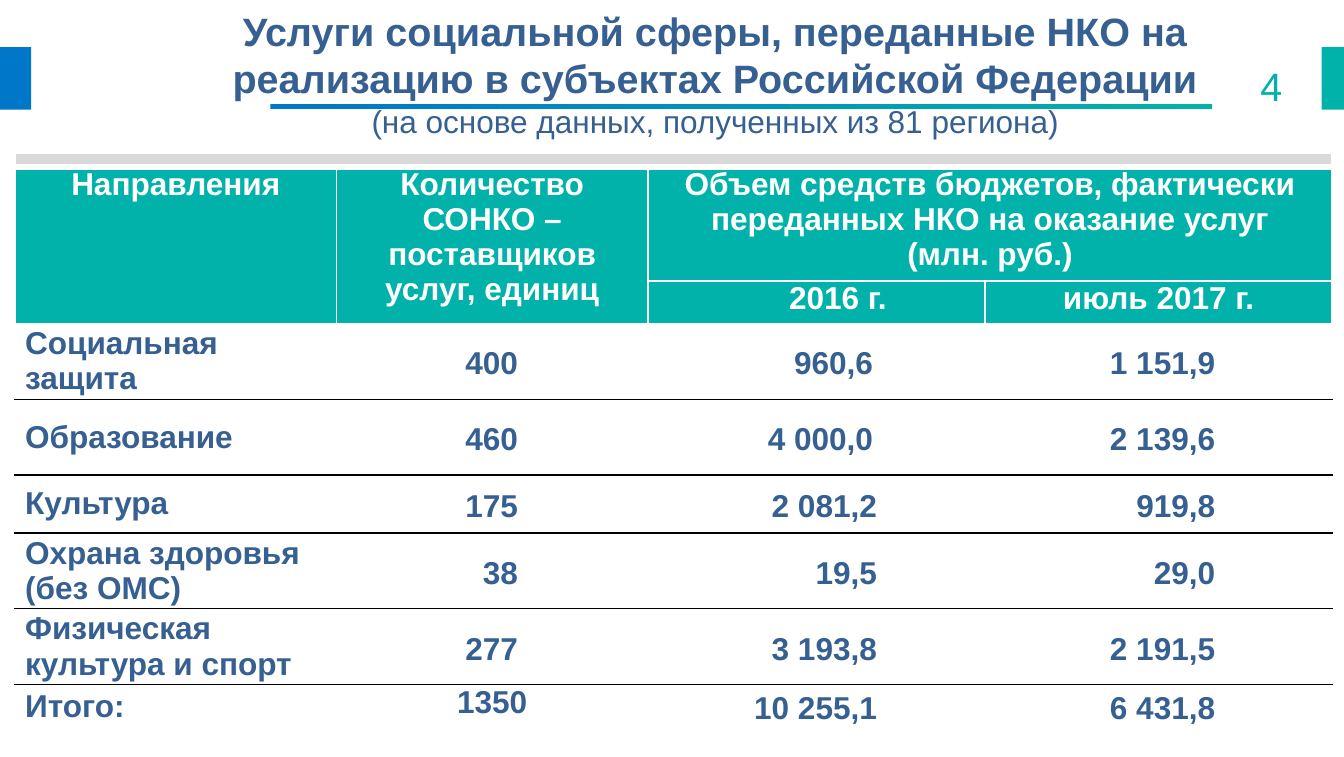
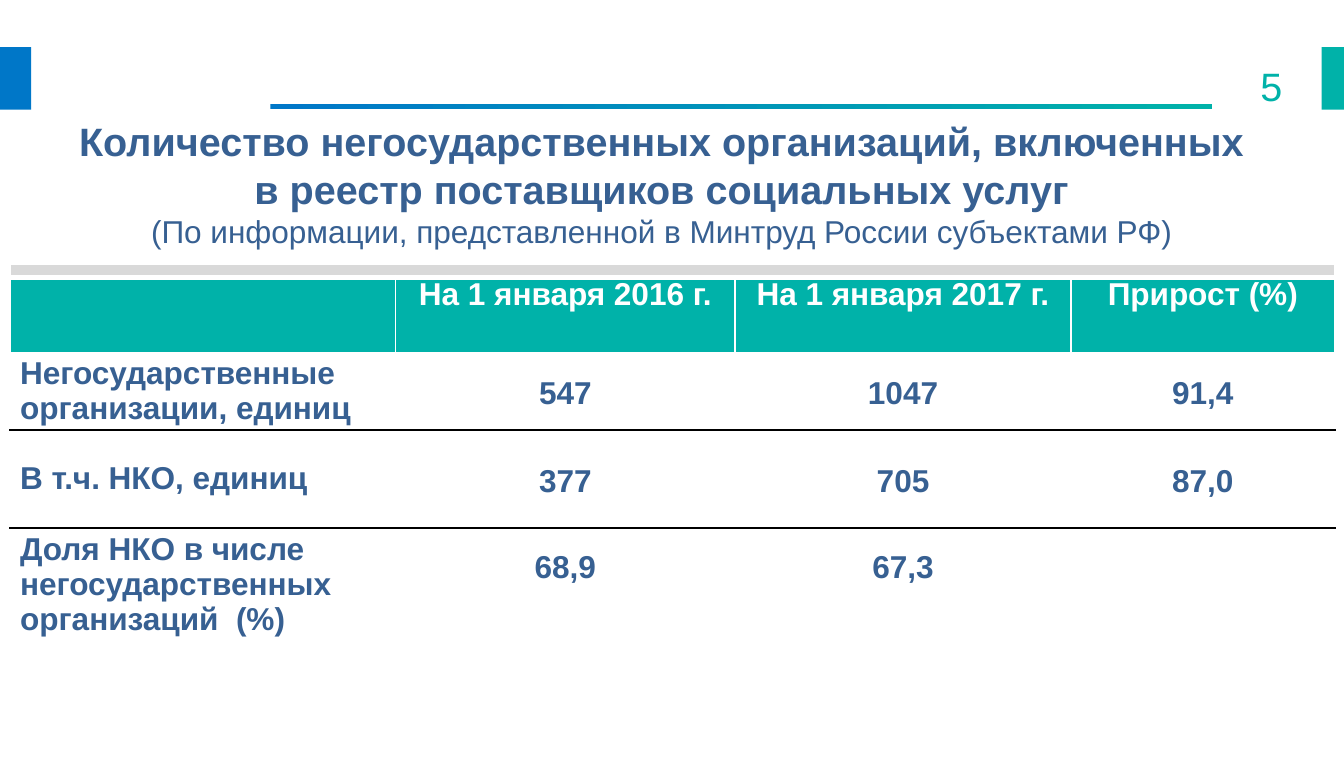
import pptx
import pptx.util
import pptx.dml.color
import pptx.enum.shapes
import pptx.enum.text
import pptx.oxml.ns
from lxml import etree

Cm = pptx.util.Cm
Pt = pptx.util.Pt
RGBColor = pptx.dml.color.RGBColor
ALIGN = pptx.enum.text.PP_ALIGN
ANCHOR = pptx.enum.text.MSO_ANCHOR
qn = pptx.oxml.ns.qn

BLUE = RGBColor(0x00, 0x77, 0xC8)
TEAL = RGBColor(0x00, 0xB2, 0xA9)
NAVY = RGBColor(0x37, 0x60, 0x92)
GREY = RGBColor(0xD9, 0xD9, 0xD9)
WHITE = RGBColor(0xFF, 0xFF, 0xFF)
BLACK = RGBColor(0x00, 0x00, 0x00)

# Shared text formats
TITLE = {"name": "Arial", "size": Pt(20), "bold": True}
SUBTITLE = {"name": "Arial", "size": Pt(16), "bold": False}
NUMBER = {"name": "Arial", "size": Pt(20), "bold": False}
CELL = {"name": "Arial", "size": Pt(16), "bold": True}

SIDE_MARGIN = 0.18
STRIPE_TEXT_SIZE = 4

# Content of the slides; measures in centimetres
slides = [
    {
        "number": "4",
        "title": "Услуги социальной сферы, переданные НКО на реализацию в субъектах Российской Федерации",
        "subtitle": "(на основе данных, полученных из 81 региона)",
        "title_box": (3.68, 0, 18.19, 2.64),
        "table_at": (0.27, 2.73),
        "columns": [5.74, 5.56, 6.02, 6.2],
        "rows": [0.25, 2.03, 0.76, 1.35, 1.35, 1.03, 1.35, 1.35, 0.76],
        "header_rows": 2,
        "merges": [(1, 0, 2, 0), (1, 1, 2, 1), (1, 2, 1, 3)],
        "figure_align": ALIGN.RIGHT,
        "figure_margins": [2.32, 1.93, 2.09],
        "cells": [
            ["Направления", "Количество СОНКО – поставщиков услуг, единиц",
             "Объем средств бюджетов, фактически переданных НКО на оказание услуг\n(млн. руб.)", ""],
            ["", "", "2016 г.", "июль 2017 г."],
            ["Социальная защита", "400", "960,6", "1 151,9"],
            ["Образование", "460", "4 000,0", "2 139,6"],
            ["Культура", "175", "2 081,2", "919,8"],
            ["Охрана здоровья (без ОМС)", "38", "19,5", "29,0"],
            ["Физическая культура и спорт", "277", "3 193,8", "2 191,5"],
            ["Итого:", "1350", "10 255,1", "6 431,8"],
        ],
    },
    {
        "number": "5",
        "title": "Количество негосударственных организаций, включенных в реестр поставщиков социальных услуг",
        "subtitle": "(По информации, представленной в Минтруд России субъектами РФ)",
        "title_box": (1.01, 1.97, 21.62, 2.65),
        "table_at": (0.18, 4.72),
        "columns": [6.88, 6.07, 5.99, 4.72],
        "rows": [0.23, 1.35, 1.37, 1.75, 1.95],
        "header_rows": 1,
        "merges": [],
        "figure_align": ALIGN.CENTER,
        "figure_margins": [SIDE_MARGIN] * 3,
        "cells": [
            ["", "На 1 января 2016 г.", "На 1 января 2017 г.", "Прирост (%)"],
            ["Негосударственные организации, единиц", "547", "1047", "91,4"],
            ["В т.ч. НКО, единиц", "377", "705", "87,0"],
            ["Доля НКО в числе негосударственных организаций  (%)", "68,9", "67,3", ""],
        ],
    },
]


def write(frame, lines, color, align, spacing=1.0):
    """Fill a text frame with one paragraph per (text, format) pair."""
    for index, (text, style) in enumerate(lines):
        paragraph = frame.paragraphs[0] if index == 0 else frame.add_paragraph()
        paragraph.alignment = align
        paragraph.line_spacing = spacing
        run = paragraph.add_run()
        run.text = text
        for key, value in style.items():
            setattr(run.font, key, value)
        run.font.color.rgb = color


def set_borders(cell, top, bottom):
    """Draw white sides and the given (colour, points) top and bottom lines."""
    sides = {"a:lnL": (WHITE, 1), "a:lnR": (WHITE, 1), "a:lnT": top, "a:lnB": bottom}
    properties = cell._tc.get_or_add_tcPr()
    for position, (tag, (color, width)) in enumerate(sides.items()):
        line = etree.Element(qn(tag), w=str(Pt(width)))
        solid = etree.SubElement(line, qn("a:solidFill"))
        etree.SubElement(solid, qn("a:srgbClr"), val=str(color))
        properties.insert(position, line)


deck = pptx.Presentation()
deck.slide_width = Cm(24)
deck.slide_height = Cm(13.51)

for content in slides:
    slide = deck.slides.add_slide(deck.slide_layouts[6])

    # Edge blocks and the line under the heading area
    for box, colors in [
        ((0, 0.84, 0.56, 1.12), [BLUE]),
        ((23.6, 0.84, 0.4, 1.12), [TEAL]),
        ((4.83, 1.85, 16.81, 0.1), [BLUE, TEAL]),
    ]:
        band = slide.shapes.add_shape(pptx.enum.shapes.MSO_SHAPE.RECTANGLE, *map(Cm, box))
        band.shadow.inherit = False
        band.line.fill.background()
        if len(colors) == 1:
            band.fill.solid()
            band.fill.fore_color.rgb = colors[0]
        else:
            band.fill.gradient()
            band.fill.gradient_angle = 0
            for stop, color in zip(band.fill.gradient_stops, colors):
                stop.color.rgb = color

    # Title and slide number
    heading = [(content["title"], TITLE), (content["subtitle"], SUBTITLE)]
    for box, lines, color, align in [
        (content["title_box"], heading, NAVY, ALIGN.CENTER),
        ((22.03, 0.99, 1.12, 0.71), [(content["number"], NUMBER)], TEAL, ALIGN.RIGHT),
    ]:
        frame = slide.shapes.add_textbox(*map(Cm, box)).text_frame
        frame.word_wrap = True
        write(frame, lines, color, align)

    # Table grid
    columns, rows = content["columns"], content["rows"]
    left, top = content["table_at"]
    table = slide.shapes.add_table(
        len(rows), len(columns), Cm(left), Cm(top), Cm(sum(columns)), Cm(sum(rows))
    ).table
    for column, width in zip(table.columns, columns):
        column.width = Cm(width)
    for row, height in zip(table.rows, rows):
        row.height = Cm(height)
    for row1, col1, row2, col2 in [(0, 0, 0, 3)] + content["merges"]:
        table.cell(row1, col1).merge(table.cell(row2, col2))

    # Table cells: grey stripe, teal header, white body
    texts = [[""] * len(columns)] + content["cells"]
    first_body, last = content["header_rows"] + 1, len(rows) - 1
    for r, row_texts in enumerate(texts):
        for c, text in enumerate(row_texts):
            cell = table.cell(r, c)
            is_body = r >= first_body
            is_figure = is_body and c > 0
            layout = {
                "margin_left": Cm(SIDE_MARGIN), "margin_right": Cm(SIDE_MARGIN),
                "margin_top": 0, "margin_bottom": 0,
                "vertical_anchor": ANCHOR.MIDDLE if is_body else ANCHOR.TOP,
            }
            align = ALIGN.LEFT if is_body else ALIGN.CENTER
            spacing = 1.0
            if text == "1350":
                align = ALIGN.CENTER
                layout["vertical_anchor"] = ANCHOR.TOP
            elif is_figure:
                align, spacing = content["figure_align"], 1.15
                layout["margin_right"] = Cm(content["figure_margins"][c - 1])
            if text in ("68,9", "67,3"):
                layout["margin_bottom"] = Cm(0.7)
            if text in ("960,6", "4 000,0"):
                layout["margin_right"] = Cm(2)
            if text == "2016 г.":
                layout["margin_left"] = Cm(0.95)
            for key, value in layout.items():
                setattr(cell, key, value)

            cell.fill.solid()
            cell.fill.fore_color.rgb = GREY if r == 0 else WHITE if is_body else TEAL
            set_borders(
                cell,
                (BLACK, 1) if r > first_body else (WHITE, 3 if r == 1 else 1),
                (BLACK, 1) if is_body and r < last else (WHITE, 3 if r == 0 else 1),
            )
            if text:
                lines = [(line, CELL) for line in text.split("\n")]
                write(cell.text_frame, lines, NAVY if is_body else WHITE, align, spacing)
            else:
                # Small end mark keeps empty cells from stretching their row
                paragraph = cell.text_frame.paragraphs[0]._p
                etree.SubElement(paragraph, qn("a:endParaRPr"), sz=str(STRIPE_TEXT_SIZE * 100))

deck.save("out.pptx")
